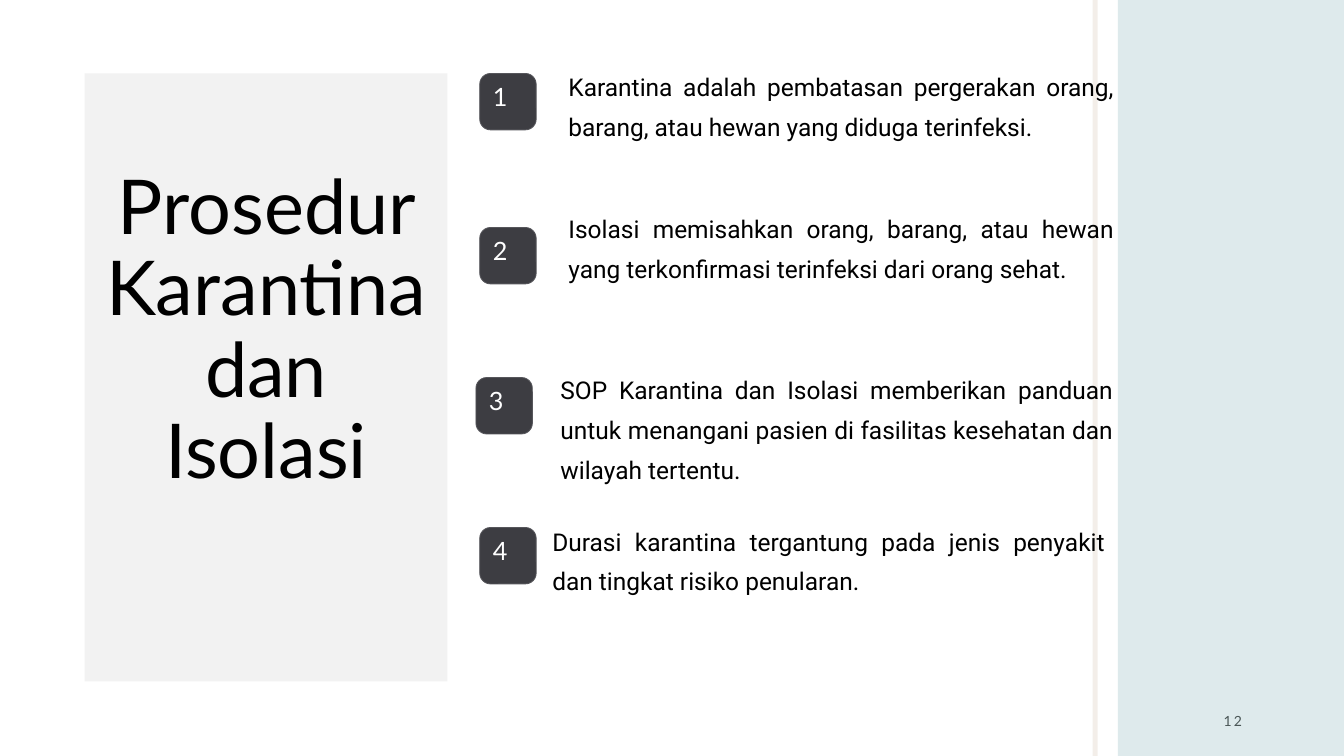
from pptx import Presentation
from pptx.dml.color import RGBColor
from pptx.enum.shapes import MSO_SHAPE
from pptx.enum.text import MSO_ANCHOR, PP_ALIGN
from pptx.oxml.ns import qn
from pptx.util import Pt
from lxml import etree

RECTANGLE, ROUNDED = MSO_SHAPE.RECTANGLE, MSO_SHAPE.ROUNDED_RECTANGLE
TOP, MIDDLE = MSO_ANCHOR.TOP, MSO_ANCHOR.MIDDLE
LEFT, CENTER, RIGHT, JUSTIFY = PP_ALIGN.LEFT, PP_ALIGN.CENTER, PP_ALIGN.RIGHT, PP_ALIGN.JUSTIFY

COLORS = {
    "band": "BED6DA",
    "stripe": "E8DFD4",
    "panel": "F2F2F2",
    "badge": "3D3D42",
    "badge_line": "56565B",
    "text": "000000",
    "number": "FFFFFF",
    "footer": "4A5656",
}

POINTS = [
    (342.7, 52.5, 406, 43.9, 390.2,
     "Karantina adalah pembatasan pergerakan orang, barang, atau hewan yang diduga terinfeksi."),
    (342.7, 162.5, 406, 145.4, 390.2,
     "Isolasi memisahkan orang, barang, atau hewan yang terkonfirmasi terinfeksi dari orang sehat."),
    (340, 269.7, 400.3, 260.6, 395.3,
     "SOP Karantina dan Isolasi memberikan panduan untuk menangani pasien di fasilitas kesehatan dan wilayah tertentu."),
    (342.7, 376.8, 394.5, 368.6, 395.3,
     "Durasi karantina tergantung pada jenis penyakit dan tingkat risiko penularan."),
]


class SlideBuilder:
    """Draws styled elements on one slide, with lengths in points."""

    def __init__(self, slide):
        self.slide = slide

    def color(self, name):
        return RGBColor.from_string(COLORS[name])

    def box(self, kind, left, top, width, height, fill, opacity=100):
        shape = self.slide.shapes.add_shape(kind, Pt(left), Pt(top), Pt(width), Pt(height))
        shape.shadow.inherit = False
        shape.fill.solid()
        shape.fill.fore_color.rgb = self.color(fill)
        shape.line.fill.background()
        if opacity < 100:
            color = shape._element.spPr.find(qn("a:solidFill")).find(qn("a:srgbClr"))
            etree.SubElement(color, qn("a:alpha")).set("val", str(opacity * 1000))
        return shape

    def set_text(self, shape, text, size, color, font="Lato", align=LEFT, anchor=TOP, spacing=None):
        frame = shape.text_frame
        frame.word_wrap = True
        frame.vertical_anchor = anchor
        paragraph = frame.paragraphs[0]
        paragraph.text = text
        paragraph.alignment = align
        paragraph.line_spacing = spacing
        paragraph.font.size = Pt(size)
        paragraph.font.name = font
        paragraph.font.color.rgb = self.color(color)
        return paragraph

    def text_box(self, left, top, width, height):
        return self.slide.shapes.add_textbox(Pt(left), Pt(top), Pt(width), Pt(height))

    def title(self, text):
        panel = self.box(RECTANGLE, 60.5, 52.5, 259.2, 434.2, "panel")
        self.set_text(panel, text, 54, "text", align=CENTER, anchor=MIDDLE, spacing=0.9)

    def badge(self, number, left, top):
        shape = self.box(ROUNDED, left, top, 40.3, 40.3, "badge")
        shape.adjustments[0] = 0.19
        shape.line.color.rgb = self.color("badge_line")
        shape.line.width = Pt(0.6)
        self.set_text(shape, str(number), 18, "number")

    def point(self, text, left, top, width):
        shape = self.text_box(left, top, width, 56.9)
        frame = shape.text_frame
        frame.margin_left = frame.margin_right = frame.margin_top = frame.margin_bottom = 0
        self.set_text(shape, text, 17.5, "text", "Roboto", JUSTIFY, spacing=Pt(28.5))

    def page_number(self, number):
        shape = self.text_box(678.2, 500.4, 216, 28.8)
        paragraph = self.set_text(shape, str(number), 10, "footer", align=RIGHT, anchor=MIDDLE)
        paragraph.runs[0]._r.get_or_add_rPr().set("spc", "150")


def main():
    presentation = Presentation()
    presentation.slide_width, presentation.slide_height = Pt(960), Pt(540)
    builder = SlideBuilder(presentation.slides.add_slide(presentation.slide_layouts[6]))
    builder.box(RECTANGLE, 798.5, 0, 161.5, 540, "band", 50)
    builder.box(RECTANGLE, 780.5, 0, 3.6, 540, "stripe", 50)
    builder.title("Prosedur Karantina dan Isolasi\v")
    builder.page_number(12)
    for number, (badge_left, badge_top, left, top, width, text) in enumerate(POINTS, 1):
        builder.badge(number, badge_left, badge_top)
        builder.point(text, left, top, width)
    presentation.save("out.pptx")


if __name__ == "__main__":
    main()
